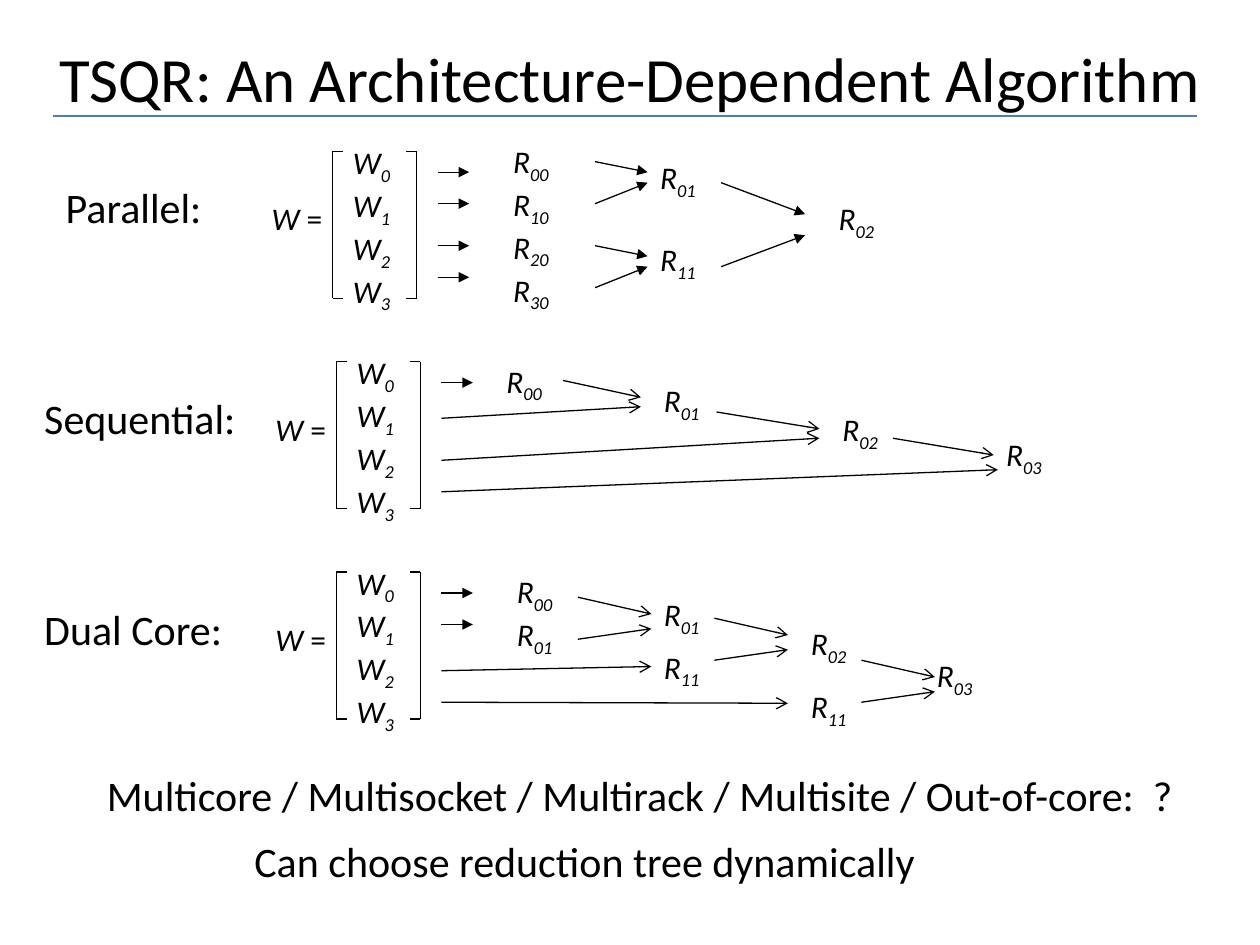
from lxml.etree import SubElement
from pptx import Presentation
from pptx.dml.color import RGBColor
from pptx.enum.shapes import MSO_CONNECTOR
from pptx.enum.text import MSO_ANCHOR, PP_ALIGN
from pptx.oxml.ns import qn
from pptx.util import Inches, Pt

COLORS = {"ink": "000000", "rule": "4B7EBC"}
FONT = "Calibri"
UNIT = 1 / 12          # grid step of the diagrams, in inches
LINE_PITCH = 0.305     # height of one 18 pt line
BRACKET_ROWS, BRACKET_COLS, BRACKET_TICK = 14, 8, 1

# Positions below are (column, row) on the grid, from the bracket's top left corner.
# short: rows of the short arrows out of W; nodes: (column, row, subscripts).
TREES = [
    {"name": "Parallel:", "name_at": (-26.6, 2.3), "origin": (2.64, 1.2),
     "short": [2, 5, 9, 12], "head": "triangle",
     "nodes": [(16, -1.5, ["00", "10", "20", "30"]), (30, 0.1, ["01"]),
               (30, 7.9, ["11"]), (47, 4, ["02"])],
     "arrows": [(25, 1, 30, 2), (25, 5, 30, 3), (25, 9, 30, 10), (25, 13, 30, 11),
                (37, 3, 45, 6), (37, 11, 45, 8)]},
    {"name": "Sequential:", "name_at": (-29, 2.4), "origin": (2.67, 2.87),
     "short": [2], "head": "arrow",
     "nodes": [(15, -0.6, ["00"]), (30, 1.3, ["01"]), (47, 4, ["02"]),
               (62.6, 6.4, ["03"])],
     "arrows": [(10, 5.4, 29, 4.3), (21.6, 1.8, 29, 3.4), (36.2, 4.8, 46, 6.4),
                (10, 9.4, 46, 7.3), (53, 7.3, 62.6, 8.9), (10, 12.4, 63, 10.3)]},
    {"name": "Dual Core:", "name_at": (-29, 2.4), "origin": (2.67, 4.54),
     "short": [2, 5], "head": "arrow",
     "nodes": [(16, -0.6, ["00", "01"]), (30, 1.6, ["01"]), (30, 6.6, ["11"]),
               (44, 4.4, ["02"]), (44, 10.4, ["11"]), (56, 7.4, ["03"])],
     "arrows": [(23, 2.4, 30, 4), (23, 6.4, 30, 5.4), (36, 4.4, 43, 6),
                (36, 8.4, 43, 7.4), (10, 12.4, 43, 12.5), (10, 9.4, 30, 9),
                (50, 8.4, 57, 10), (50, 12.4, 57, 11.4)]},
]


def style(run, size, italic=False):
    run.font.name = FONT
    run.font.size = Pt(size)
    run.font.italic = italic
    run.font.color.rgb = RGBColor.from_string(COLORS["ink"])


def add_frame(shapes, left, top, width, height, wrap=False):
    frame = shapes.add_textbox(*map(Inches, (left, top, width, height))).text_frame
    frame.word_wrap = wrap
    return frame


def add_text(shapes, text, box, size=24, wrap=False, align=PP_ALIGN.LEFT):
    frame = add_frame(shapes, *box, wrap)
    frame.text = text
    frame.paragraphs[0].alignment = align
    style(frame.paragraphs[0].runs[0], size)
    return frame


def add_symbols(shapes, letter, subscripts, left, top):
    """One letter with a subscript on each line."""
    height = 0.1 + LINE_PITCH * len(subscripts)
    frame = add_frame(shapes, left, top, 0.55, height)
    for number, subscript in enumerate(subscripts):
        line = frame.add_paragraph() if number else frame.paragraphs[0]
        line.text = letter
        style(line.runs[0], 18, italic=True)
        index = line.add_run()
        index.text = subscript
        style(index, 18, italic=True)
        index.font._element.set("baseline", "-25000")


def add_line(shapes, start, end, head=None, color="ink"):
    line = shapes.add_connector(MSO_CONNECTOR.STRAIGHT, *map(Inches, (*start, *end)))
    line.line.color.rgb = RGBColor.from_string(COLORS[color])
    line.line.width = Pt(0.75)
    if head:
        SubElement(line.line._get_or_add_ln(), qn("a:tailEnd"), type=head)
    SubElement(line._element.spPr, qn("a:effectLst"))


def add_tree(slide, tree):
    shapes = slide.shapes.add_group_shape().shapes
    left, top = tree["origin"]

    def at(column, row):
        return left + column * UNIT, top + row * UNIT

    # Name and the stacked blocks of W
    add_text(shapes, tree["name"], (*at(*tree["name_at"]), 1.8, 0.5), wrap=True)
    equation = add_text(shapes, "W", (*at(-7, 4), 0.75, 0.4), 18, wrap=True)
    equation.paragraphs[0].runs[0].font.italic = True
    equals = equation.paragraphs[0].add_run()
    equals.text = " ="
    style(equals, 18)
    add_symbols(shapes, "W", "0123", *at(0.75, -1.4))

    # Brackets
    for side, tick in ((0, BRACKET_TICK), (BRACKET_COLS, -BRACKET_TICK)):
        add_line(shapes, at(side, 0), at(side, BRACKET_ROWS))
        for row in (0, BRACKET_ROWS):
            add_line(shapes, at(side, row), at(side + tick, row))

    # Reduction steps
    for row in tree["short"]:
        add_line(shapes, at(10, row), at(13, row), "triangle")
    for column, row, subscripts in tree["nodes"]:
        add_symbols(shapes, "R", subscripts, *at(column, row))
    for x1, y1, x2, y2 in tree["arrows"]:
        add_line(shapes, at(x1, y1), at(x2, y2), tree["head"])


def main():
    deck = Presentation()
    deck.slide_width, deck.slide_height = Inches(10), Inches(7.5)
    slide = deck.slides.add_slide(deck.slide_layouts[6])

    # Title and rule
    title = add_text(slide.shapes, "TSQR: An Architecture-Dependent Algorithm",
                     (0.25, 0.3, 9.5, 0.62), 36, wrap=True, align=PP_ALIGN.CENTER)
    title.vertical_anchor = MSO_ANCHOR.MIDDLE
    add_line(slide.shapes, (0.42, 0.92), (9.5, 0.92), color="rule")

    for tree in TREES:
        add_tree(slide, tree)

    # Closing lines
    add_text(slide.shapes, "Can choose reduction tree dynamically",
             (1.88, 6.58, 5.52, 0.5), align=PP_ALIGN.CENTER)
    add_text(slide.shapes,
             "Multicore / Multisocket / Multirack / Multisite / Out-of-core:  ?",
             (0.75, 6.06, 8.8, 0.5))
    deck.save("out.pptx")


if __name__ == "__main__":
    main()
